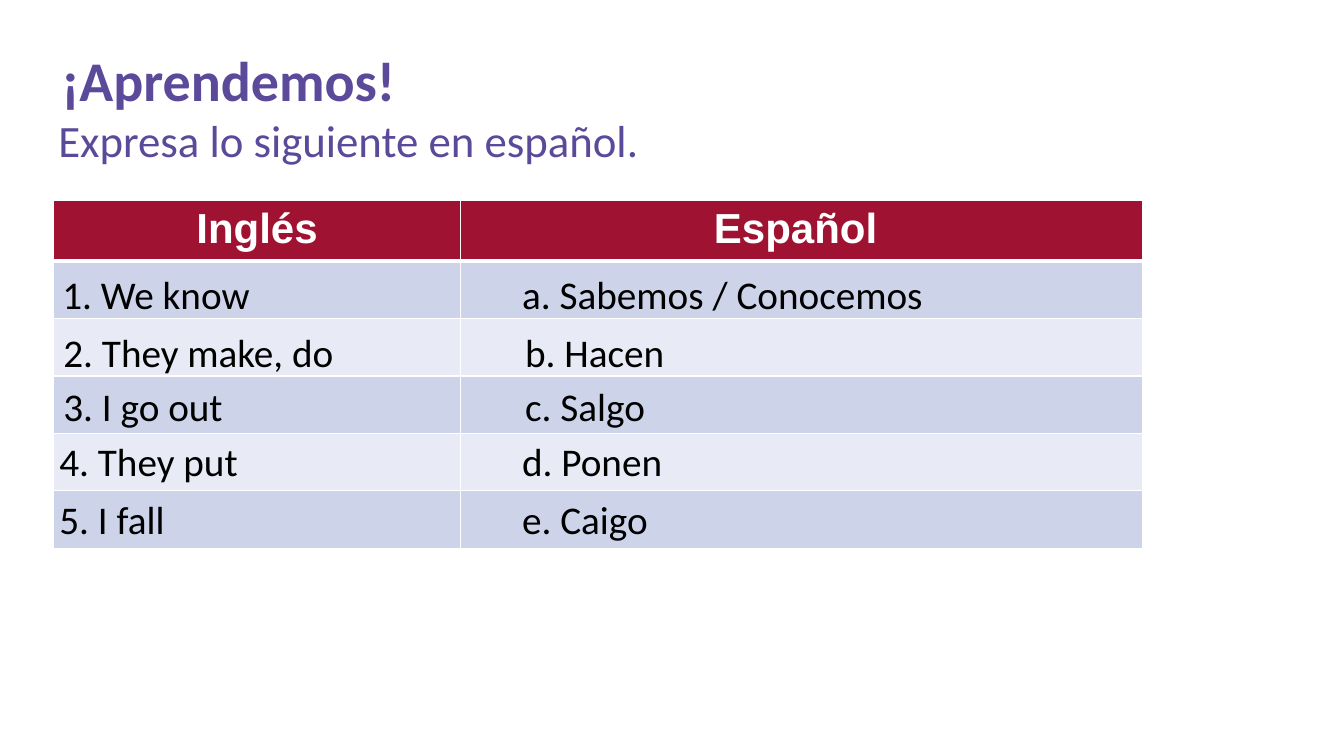
from lxml.etree import SubElement
from pptx import Presentation
from pptx.dml.color import RGBColor
from pptx.enum.text import MSO_AUTO_SIZE, PP_ALIGN
from pptx.oxml.ns import qn
from pptx.util import Inches, Pt

# Palette
PURPLE, BLACK, WHITE = "5B499A", "000000", "FFFFFF"
CRIMSON, BAND_DARK, BAND_LIGHT = "9F1231", "CDD4EA", "E8EBF5"

# Table grid, in inches
GRID_LEFT, GRID_TOP = 0.53, 1.99
COLUMNS = (4.04, 6.76)
HEADER_HEIGHT, ROW_HEIGHT = 0.58, 0.57
HEADINGS = ("Inglés", "Español ")

# Text formats
TITLE = dict(name="Calibri", size=Pt(40), bold=True, color=PURPLE)
SUBTITLE = dict(name="Calibri", size=Pt(32), color=PURPLE)
HEADING = dict(name="Arial", size=Pt(30), bold=True, color=WHITE)
PHRASE = dict(name="Calibri", size=Pt(28), color=BLACK)

# Per row: drop below the row's top edge, then (text, left, width) per language
EXERCISES = (
    (0.06, ("1. We know", 0.52, 4.45), ("a. Sabemos / Conocemos", 5.08, 5.31)),
    (0.07, ("2. They make, do", 0.53, 4.19), ("b. Hacen", 5.11, 3.31)),
    (0.03, ("3. I go out", 0.53, 4.19), ("c. Salgo", 5.11, 2.65)),
    (0.01, ("4. They put", 0.49, 2.72), ("d. Ponen", 5.08, 3.48)),
    (0.01, ("5. I fall", 0.49, 4.58), ("e. Caigo", 5.08, 3.09)),
)


def rgb(value):
    return RGBColor.from_string(value)


def write(paragraph, text, style):
    run = paragraph.add_run()
    run.text = text
    for attribute, value in style.items():
        if attribute == "color":
            run.font.color.rgb = rgb(value)
        else:
            setattr(run.font, attribute, value)


def add_text(slide, text, left, top, width, height, style, grow=False):
    box = slide.shapes.add_textbox(*map(Inches, (left, top, width, height)))
    frame = box.text_frame
    frame.word_wrap = True
    if grow:
        frame.auto_size = MSO_AUTO_SIZE.SHAPE_TO_FIT_TEXT
    write(frame.paragraphs[0], text, style)


def paint_cell(cell, color, top=1, bottom=1):
    """White borders with widths in points, then the fill."""
    properties = cell._tc.get_or_add_tcPr()
    for side, width in (("L", 1), ("R", 1), ("T", top), ("B", bottom)):
        line = SubElement(properties, qn(f"a:ln{side}"), w=str(Pt(width)))
        solid = SubElement(line, qn("a:solidFill"))
        SubElement(solid, qn("a:srgbClr"), val=WHITE)
    cell.fill.solid()
    cell.fill.fore_color.rgb = rgb(color)
    cell.margin_left = cell.margin_right = Inches(0.08)


def add_vocabulary_table(slide):
    height = HEADER_HEIGHT + ROW_HEIGHT * len(EXERCISES)
    table = slide.shapes.add_table(
        len(EXERCISES) + 1, len(COLUMNS), Inches(GRID_LEFT), Inches(GRID_TOP),
        Inches(sum(COLUMNS)), Inches(height)).table
    for column, width in zip(table.columns, COLUMNS):
        column.width = Inches(width)
    for index, row in enumerate(table.rows):
        row.height = Inches(ROW_HEIGHT if index else HEADER_HEIGHT)
        for cell, heading in zip(row.cells, HEADINGS):
            if index:
                band = BAND_DARK if index % 2 else BAND_LIGHT
                paint_cell(cell, band, top=3 if index == 1 else 1)
            else:
                paint_cell(cell, CRIMSON, bottom=3)
                paragraph = cell.text_frame.paragraphs[0]
                paragraph.alignment = PP_ALIGN.CENTER
                write(paragraph, heading, HEADING)


def add_phrases(slide):
    for index, (drop, *phrases) in enumerate(EXERCISES):
        top = GRID_TOP + HEADER_HEIGHT + index * ROW_HEIGHT + drop
        for text, left, width in phrases:
            add_text(slide, text, left, top, width, ROW_HEIGHT, PHRASE, grow=True)


def main():
    deck = Presentation()
    deck.slide_width, deck.slide_height = Inches(13.33), Inches(7.5)
    slide = deck.slides.add_slide(deck.slide_layouts[6])

    # Heading
    add_text(slide, "¡Aprendemos!", 0.51, 0.4, 11.5, 0.68, TITLE)
    add_text(slide, "Expresa lo siguiente en español.", 0.48, 1.07, 12.8, 1.23, SUBTITLE)

    # Exercise
    add_vocabulary_table(slide)
    add_phrases(slide)
    deck.save("out.pptx")


if __name__ == "__main__":
    main()
